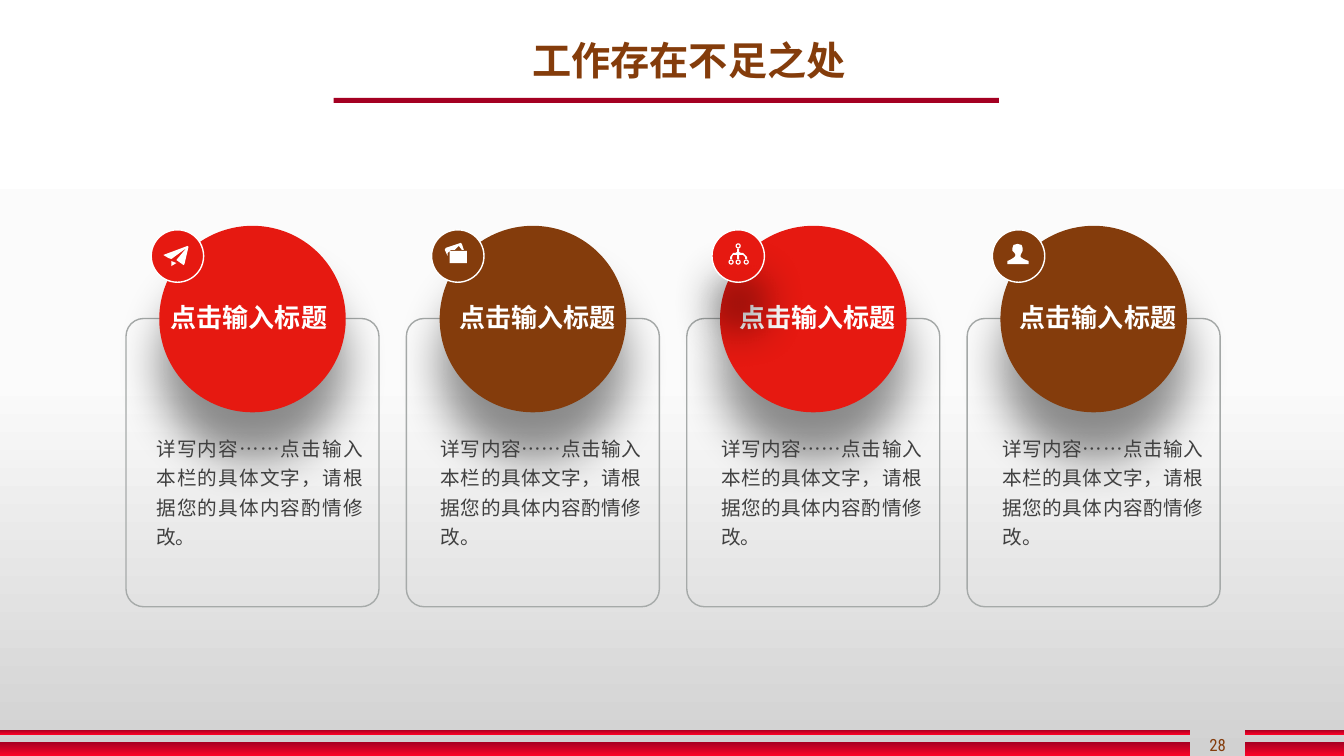
import copy
import math

from lxml import etree
from pptx import Presentation
from pptx import util as u
from pptx.dml.color import RGBColor
from pptx.enum import shapes, text
from pptx.oxml.ns import qn

COLORS = {
    "red": "E61911", "brown": "843C0C", "heading": "843C0B", "rule": "A40022",
    "bar_end": "FC0226", "outline": "A6AAA9", "body": "404040", "white": "FFFFFF",
    "shadow": "000000", "bg_mid": "FBFBFB", "bg_low": "D1D1D1",
}
CJK, NUMERAL = "Noto Sans CJK SC", "Roboto Condensed"
HEADING, CARD_TITLE = "工作存在不足之处", "点击输入标题"
CARD_BODY = "详写内容……点击输入本栏的具体文字，请根据您的具体内容酌情修改。"

# Grid of 160 columns by 90 rows; one cell is 1/12 inch
CELL = u.Inches(1 / 12)
CARD_PITCH = 33.38
ICON_UNIT = 0.12  # icon outlines are drawn in hundredths of an inch


def rgb(name):
    return RGBColor.from_string(COLORS[name])


def ring(cx, cy):
    """Two closed outlines of a small ring."""
    return [[(cx + r * math.cos(k * math.pi / 8), cy + r * math.sin(k * math.pi / 8))
             for k in range(16)] for r in (2.6, 1.4)]


PLANE = [
    [(36, 16), (12, 25), (17, 28), (20, 29), (35, 18), (25, 30), (32, 35), (33, 34), (37, 17)],
    [(20, 36), (25, 33), (20, 31)],
]
PHOTOS = [
    [(32, 20), (30, 14), (29, 13), (14, 18), (13, 20), (16, 26), (16, 23), (19, 20),
     (23, 20), (27, 16), (30, 20)],
    [(18, 21), (35, 21), (35, 33), (18, 33)],
]
TREE = [
    [(25, 19), (27, 19), (27, 22), (29, 23), (31, 23), (35, 27), (35, 29), (33, 29),
     (33, 27), (31, 25), (27, 25), (27, 29), (25, 29), (25, 25), (21, 25), (20, 27),
     (20, 29), (18, 29), (18, 27), (21, 23), (23, 23), (25, 22)],
    *ring(26, 16), *ring(19, 32), *ring(26, 32), *ring(34, 32),
]
PERSON = [
    [(31, 29), (28, 27), (28, 25), (29, 23), (30, 21), (30, 18), (29, 15), (25, 14),
     (21, 15), (20, 18), (20, 21), (22, 23), (23, 25), (22, 27), (19, 29), (15, 31),
     (15, 34), (36, 34), (36, 31)],
]

# colour, icon, badge shadow, title x, body x, body width
CARDS = [
    ("red", PLANE, False, 4.26, 3.6, 24.6),
    ("brown", PHOTOS, False, 5.2, 4.1, 23.88),
    ("red", TREE, True, 5.2, 4.1, 23.88),
    ("brown", PERSON, False, 5.2, 4.2, 23.88),
]


def cells(*lengths):
    return [u.Emu(round(n * CELL)) for n in lengths]


def gradient(fill, element, stops):
    """Vertical gradient from (position, colour) pairs."""
    fill.gradient()
    fill.gradient_angle = 270
    stop_list = element.find(".//" + qn("a:gsLst"))
    while len(stop_list) < len(stops):
        stop_list.append(copy.deepcopy(stop_list[0]))
    for stop, xml, (position, color) in zip(fill.gradient_stops, stop_list, stops):
        stop.color.rgb = rgb(color)
        xml.set("pos", str(position * 1000))


def paint(sp, fill=None, line=None, shadow=False):
    sp.shadow.inherit = False
    if fill:
        sp.fill.solid()
        sp.fill.fore_color.rgb = rgb(fill)
    else:
        sp.fill.background()
    if line:
        sp.line.color.rgb = rgb(line)
        sp.line.width = u.Pt(1)
    else:
        sp.line.fill.background()
    if shadow:
        effects = sp.element.spPr.find(qn("a:effectLst"))
        outer = etree.SubElement(effects, qn("a:outerShdw"), blurRad=str(u.Pt(33)),
                                 dist=str(u.Pt(33)), dir="5400000", algn="ctr",
                                 rotWithShape="0")
        color = etree.SubElement(outer, qn("a:srgbClr"), val=COLORS["shadow"])
        etree.SubElement(color, qn("a:alpha"), val="43000")


def add_preset(s, kind, box, **look):
    sp = s.shapes.add_shape(kind, *cells(*box))
    paint(sp, **look)
    return sp


def write(sp, words, size, color, font=CJK, bold=False, spacing=1.0,
          align=text.PP_ALIGN.CENTER, anchor=text.MSO_ANCHOR.MIDDLE):
    tf = sp.text_frame
    tf.word_wrap = True
    tf.auto_size = text.MSO_AUTO_SIZE.NONE
    tf.vertical_anchor = anchor
    tf.margin_left = tf.margin_right = tf.margin_top = tf.margin_bottom = 0
    p = tf.paragraphs[0]
    p.alignment = align
    p.line_spacing = spacing
    p.space_before = u.Pt(0)
    r = p.add_run()
    r.text = words
    r.font.size = u.Pt(size)
    r.font.bold = bold
    r.font.name = font
    r.font.color.rgb = rgb(color)
    etree.SubElement(r.font._element, qn("a:ea"), typeface=font)


def add_text(s, box, words, size, color, **fmt):
    write(s.shapes.add_textbox(*cells(*box)), words, size, color, **fmt)


def add_icon(s, x, y, outlines, shadow):
    first, *others = [[(px * 100, py * 100) for px, py in line] for line in outlines]
    fb = s.shapes.build_freeform(*first[0], scale=ICON_UNIT * CELL / 100)
    fb.add_line_segments(first[1:], close=True)
    for line in others:
        fb.move_to(*line[0])
        fb.add_line_segments(line[1:], close=True)
    paint(fb.convert_to_shape(*cells(x, y)), "white", shadow=shadow)


def add_header(s, x, y, w):
    sp = s.shapes.title
    sp.left, sp.top, sp.width, sp.height = cells(x + 19.32, y, 45.96, 6.72)
    write(sp, HEADING, 28, "heading", bold=True, spacing=0.9)
    add_preset(s, shapes.MSO_SHAPE.RECTANGLE, (x, y + 7.56, w, 0.6), fill="rule")


def add_footer(s, y):
    for top, h in ((y, 0.6), (y + 1.44, 1.68)):
        for x, w in ((0, 141.72), (148.2, 11.8)):
            sp = add_preset(s, shapes.MSO_SHAPE.RECTANGLE, (x, top, w, h))
            gradient(sp.fill, sp.element, [(0, "rule"), (100, "bar_end")])
    add_text(s, (141.96, y, 6, 3.48), "28", 12, "brown", font=NUMERAL)


def add_card(s, x, y, card):
    color, icon, badge_shadow, title_x, body_x, body_w = card
    sp = add_preset(s, shapes.MSO_SHAPE.ROUNDED_RECTANGLE, (x, y, 30.12, 34.32),
                    line="outline")
    sp.adjustments[0] = 0.07
    # Disc with its title
    add_preset(s, shapes.MSO_SHAPE.OVAL, (x + 3.96, y - 11.04, 22.2, 22.2),
               fill=color, shadow=True)
    add_text(s, (x + title_x, y - 3.72, 20.76, 7.56), CARD_TITLE, 18.6, "white",
             bold=True, spacing=0.9)
    # Badge with its icon
    badge_x, badge_y = x + 3, y - 10.56
    add_preset(s, shapes.MSO_SHAPE.OVAL, (badge_x, badge_y, 6.24, 6.24),
               fill=color, line="white", shadow=badge_shadow)
    add_icon(s, badge_x, badge_y, icon, badge_shadow)
    add_text(s, (x + body_x, y + 12.96, body_w, 14.88), CARD_BODY, 14, "body",
             spacing=1.25, align=text.PP_ALIGN.JUSTIFY)


def main():
    prs = Presentation()
    prs.slide_width, prs.slide_height = cells(160, 90)
    s = prs.slides.add_slide(prs.slide_layouts[5])
    gradient(s.background.fill, s.element, [(0, "white"), (50, "bg_mid"), (100, "bg_low")])
    add_header(s, 39.72, 4.08, 79.2)
    add_footer(s, 86.88)
    for i, card in enumerate(CARDS):
        add_card(s, 15 + i * CARD_PITCH, 37.92, card)
    prs.save("out.pptx")


if __name__ == "__main__":
    main()
